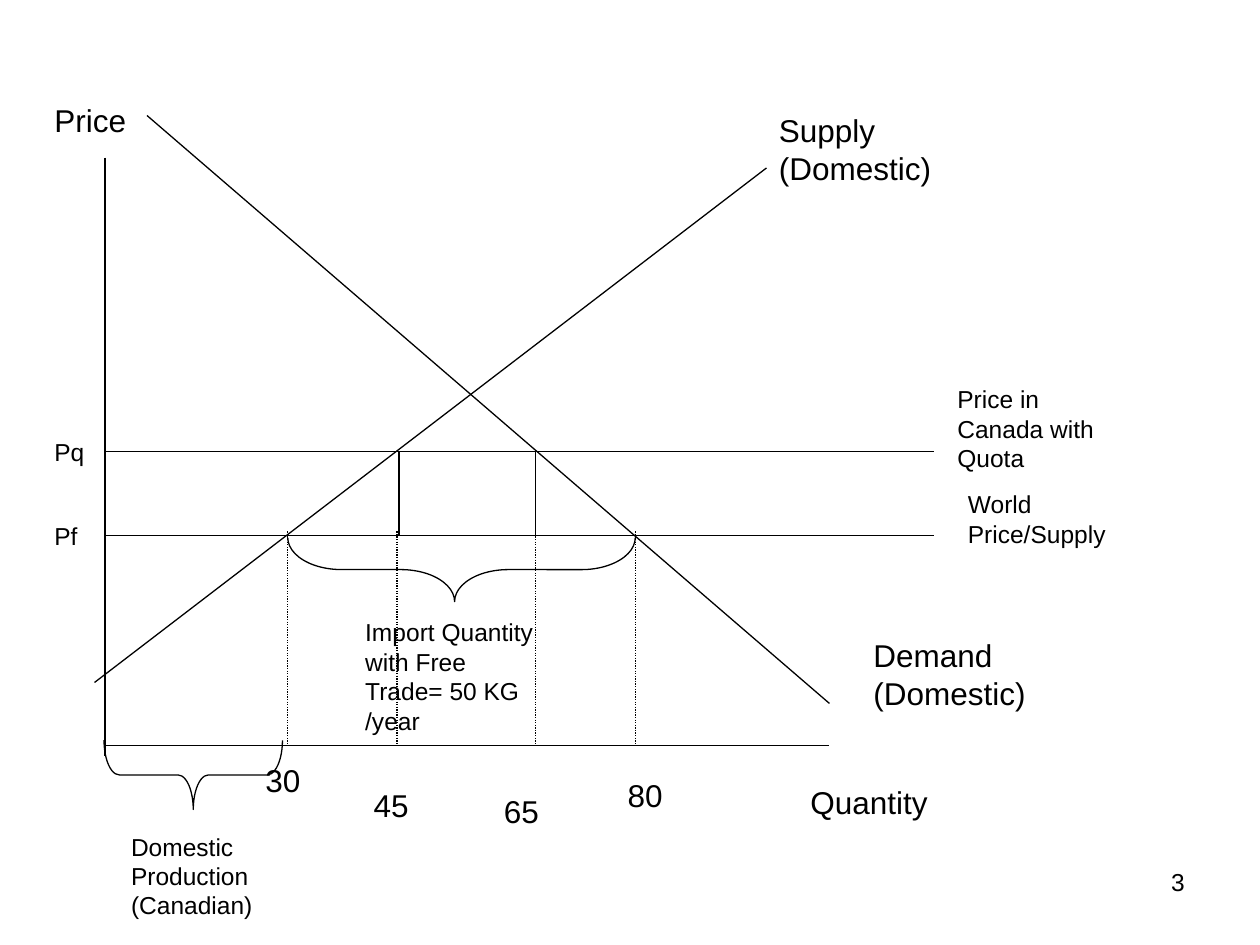
"""Build the slide on free trade and import quotas as a supply and demand diagram."""
from lxml.etree import SubElement
from pptx import Presentation
from pptx.dml.color import RGBColor
from pptx.enum.dml import MSO_LINE
from pptx.enum.shapes import MSO_CONNECTOR, MSO_SHAPE
from pptx.enum.text import MSO_AUTO_SIZE, PP_ALIGN
from pptx.oxml.ns import qn
from pptx.util import Inches, Pt

BLACK = RGBColor(0, 0, 0)
COLUMNS, ROWS = 120, 90
LARGE, SMALL = 18, 14


class Diagram:
    """Draw in one style on a slide, with places in columns and rows."""

    def __init__(self, deck):
        self.shapes = deck.slides.add_slide(deck.slide_layouts[6]).shapes
        self.column = deck.slide_width / COLUMNS
        self.row = deck.slide_height / ROWS

    def place(self, x, y):
        return round(x * self.column), round(y * self.row)

    def ink(self, line):
        line.color.rgb = BLACK
        line.width = Pt(0.75)

    def line(self, start, end, dash=None):
        stroke = self.shapes.add_connector(
            MSO_CONNECTOR.STRAIGHT, *self.place(*start), *self.place(*end))
        self.ink(stroke.line)
        if dash:
            stroke.line.dash_style = dash
        SubElement(stroke._element.spPr, qn("a:effectLst"))

    def label(self, words, x, y, width, height, size=LARGE, align=PP_ALIGN.LEFT):
        box = self.shapes.add_textbox(*self.place(x, y), *self.place(width, height))
        frame = box.text_frame
        frame.word_wrap = True
        frame.auto_size = MSO_AUTO_SIZE.SHAPE_TO_FIT_TEXT
        frame.text = words
        paragraph = frame.paragraphs[0]
        paragraph.alignment = align
        paragraph.font.name = "Arial"
        paragraph.font.size = Pt(size)
        paragraph.font.color.rgb = BLACK

    def brace_below(self, x, y, width, height, curl, tip):
        left = x + (width - height) / 2
        top = y + (height - width) / 2
        brace = self.shapes.add_shape(
            MSO_SHAPE.RIGHT_BRACE, *self.place(left, top), *self.place(height, width))
        brace.rotation = 90
        brace.adjustments[0] = curl
        brace.adjustments[1] = tip
        brace.shadow.inherit = False
        brace.fill.background()
        self.ink(brace.line)


def main():
    deck = Presentation()
    deck.slide_width, deck.slide_height = Inches(10), Inches(7.5)
    diagram = Diagram(deck)

    origin, base = 10, 71
    quota_price, world_price = 43, 51
    price_axis = (origin, 15), (origin, 72)
    quantity_axis = (origin, base), (79, base)
    demand = (14, 11), (79, 67)
    supply = (9, 65), (73, 16)
    for start, end in (price_axis, quantity_axis, demand, supply):
        diagram.line(start, end)
    for price in (world_price, quota_price):
        diagram.line((origin, price), (89, price))
    for quantity in (38, 51):
        diagram.line((quantity, quota_price), (quantity, world_price))
    for quantity in (27.4, 60.5, 37.8, 51):
        diagram.line((quantity, 50.6), (quantity, base), MSO_LINE.ROUND_DOT)

    for words, x, y, width, height in (
        ("Price", 4, 9, 10, 4.8),
        ("Quantity", 76, 74, 17, 4.8),
        ("Supply (Domestic)", 73, 10, 18, 8.4),
        ("Demand (Domestic)", 82, 60, 22, 8.4),
        ("30", 24.1, 71.9, 6.1, 4.8),
        ("80", 58.6, 73.3, 9, 4.8),
        ("45", 34.4, 74.3, 6.6, 4.8),
        ("65", 46.8, 74.8, 8.5, 4.8),
    ):
        diagram.label(words, x, y, width, height)

    diagram.brace_below(27.4, 51.2, 33.1, 6.1, 0.84, 0.52)
    diagram.brace_below(9.9, 70.5, 17, 6.6, 0.22, 0.5)

    for words, x, y, width, height in (
        ("Pf", 4, 49, 7, 4),
        ("Pq", 4, 41, 6, 4),
        ("World Price/Supply", 91, 46, 18, 6.8),
        ("Price in Canada with Quota", 90, 36, 19, 9.7),
        ("Import Quantity with Free Trade= 50 KG /year", 33.6, 58.2, 19.8, 12.5),
        ("Domestic Production (Canadian)", 11.3, 78.6, 16.1, 9.7),
    ):
        diagram.label(words, x, y, width, height, SMALL)
    diagram.label("3", 86, 82, 28, 6.2, SMALL, PP_ALIGN.RIGHT)

    deck.save("out.pptx")


if __name__ == "__main__":
    main()
